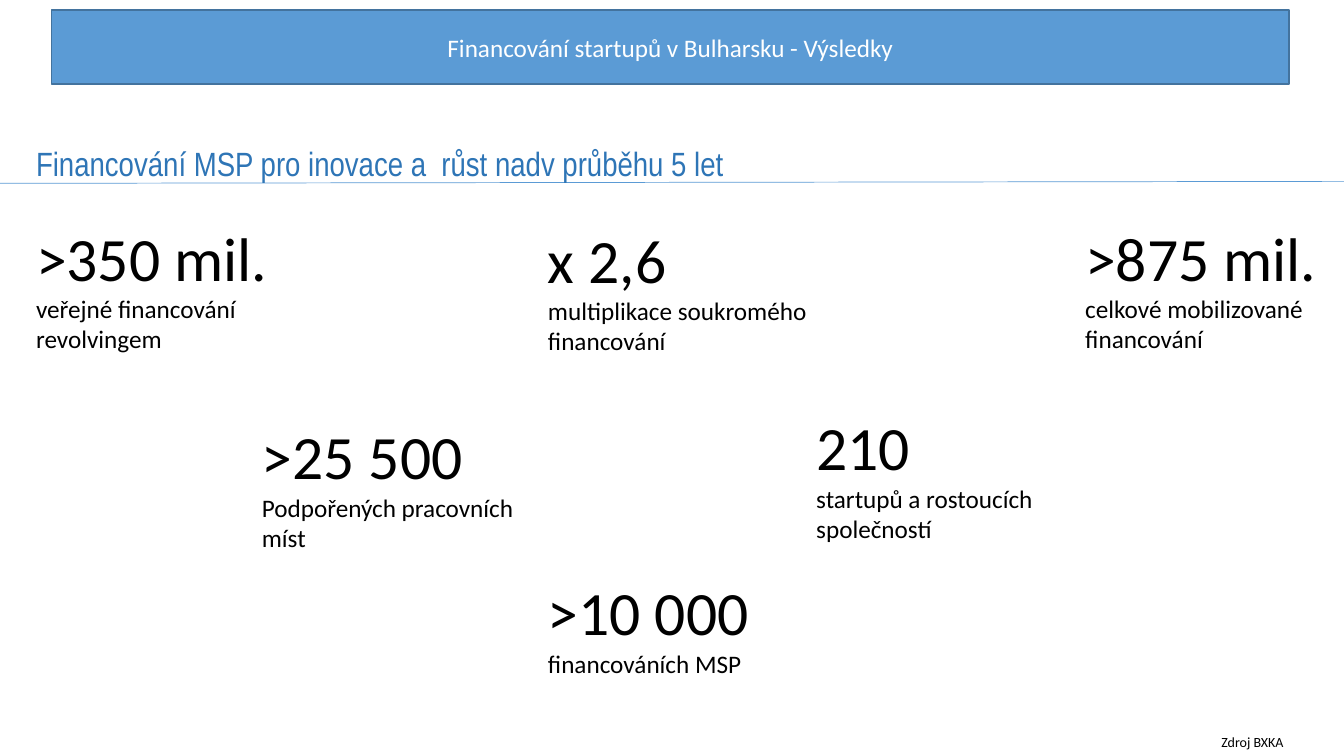
"""Builds a slide with the results of startup financing in Bulgaria."""
from lxml.etree import SubElement
from pptx import Presentation
from pptx.dml.color import RGBColor
from pptx.enum.shapes import MSO_CONNECTOR, MSO_SHAPE
from pptx.enum.text import MSO_ANCHOR, MSO_AUTO_SIZE, PP_ALIGN
from pptx.oxml.ns import qn
from pptx.util import Cm, Pt

BLUE = RGBColor(0x5B, 0x9B, 0xD5)
BORDER_BLUE = RGBColor(0x43, 0x73, 0x9E)
HEADING_BLUE = RGBColor(0x2E, 0x75, 0xB6)
WHITE = RGBColor(0xFF, 0xFF, 0xFF)
BLACK = RGBColor(0, 0, 0)

TITLE = "Financování startupů v Bulharsku - Výsledky"
HEADING = "Financování MSP pro inovace a  růst nadv průběhu 5 let"
SOURCE = "Zdroj BXKA"
RESULTS = [
    (">350 mil.", "veřejné financování revolvingem", 0.66, 5.41, 6.6),
    ("x 2,6", "multiplikace soukromého financování", 13.56, 5.46, 7.21),
    (">875 mil.", "celkové mobilizované financování", 27.1, 5.41, 6.4),
    (">25 500", "Podpořených pracovních míst", 6.35, 10.41, 7.21),
    ("210", "startupů a rostoucích společností", 20.32, 10.19, 7.21),
    (">10 000", "financováních MSP", 13.56, 14.35, 7.21),
]
SLIDE_WIDTH, SLIDE_HEIGHT = 33.87, 19.05


def write_lines(frame, lines, align=PP_ALIGN.LEFT):
    """Fill a text frame with (text, size, font name, colour) lines."""
    frame.word_wrap = True
    for index, (text, size, name, color) in enumerate(lines):
        para = frame.add_paragraph() if index else frame.paragraphs[0]
        para.text = text
        para.alignment = align
        para.font.size = Pt(size)
        para.font.name = name
        para.font.color.rgb = color


def add_text(page, left, top, width, height, lines):
    """Add a wrapping text box that grows with its text."""
    box = page.shapes.add_textbox(Cm(left), Cm(top), Cm(width), Cm(height))
    write_lines(box.text_frame, lines)
    box.text_frame.auto_size = MSO_AUTO_SIZE.SHAPE_TO_FIT_TEXT


def add_banner(page):
    """Add the title banner."""
    banner = page.shapes.add_shape(
        MSO_SHAPE.RECTANGLE, Cm(1.3), Cm(0.25), Cm(31.19), Cm(1.87))
    banner.shadow.inherit = False
    banner.fill.solid()
    banner.fill.fore_color.rgb = BLUE
    banner.line.color.rgb = BORDER_BLUE
    banner.line.width = Pt(1)
    banner.text_frame.vertical_anchor = MSO_ANCHOR.MIDDLE
    write_lines(banner.text_frame, [(TITLE, 18, "Calibri", WHITE)], PP_ALIGN.CENTER)


def add_rule(page):
    """Add the thin line under the heading."""
    rule = page.shapes.add_connector(
        MSO_CONNECTOR.STRAIGHT, 0, Cm(4.62), Cm(SLIDE_WIDTH), Cm(4.57))
    rule.line.color.rgb = BLUE
    rule.line.width = Pt(0.5)
    SubElement(rule._element.spPr, qn("a:effectLst"))


def main():
    deck = Presentation()
    deck.slide_width, deck.slide_height = Cm(SLIDE_WIDTH), Cm(SLIDE_HEIGHT)
    page = deck.slides.add_slide(deck.slide_layouts[6])
    add_banner(page)
    add_rule(page)
    add_text(page, 0.66, 3.48, 18.03, 1.27, [(HEADING, 24, "Arial Narrow", HEADING_BLUE)])
    add_text(page, 30.53, 18.36, 2.29, 0.69, [(SOURCE, 10, "Calibri", BLACK)])
    for figure, label, left, top, width in RESULTS:
        height = 2.9 if label == "financováních MSP" else 3.68
        add_text(page, left, top, width, height,
                 [(figure, 44, "Calibri", BLACK), (label, 18, "Calibri", BLACK)])
    deck.save("out.pptx")


if __name__ == "__main__":
    main()
